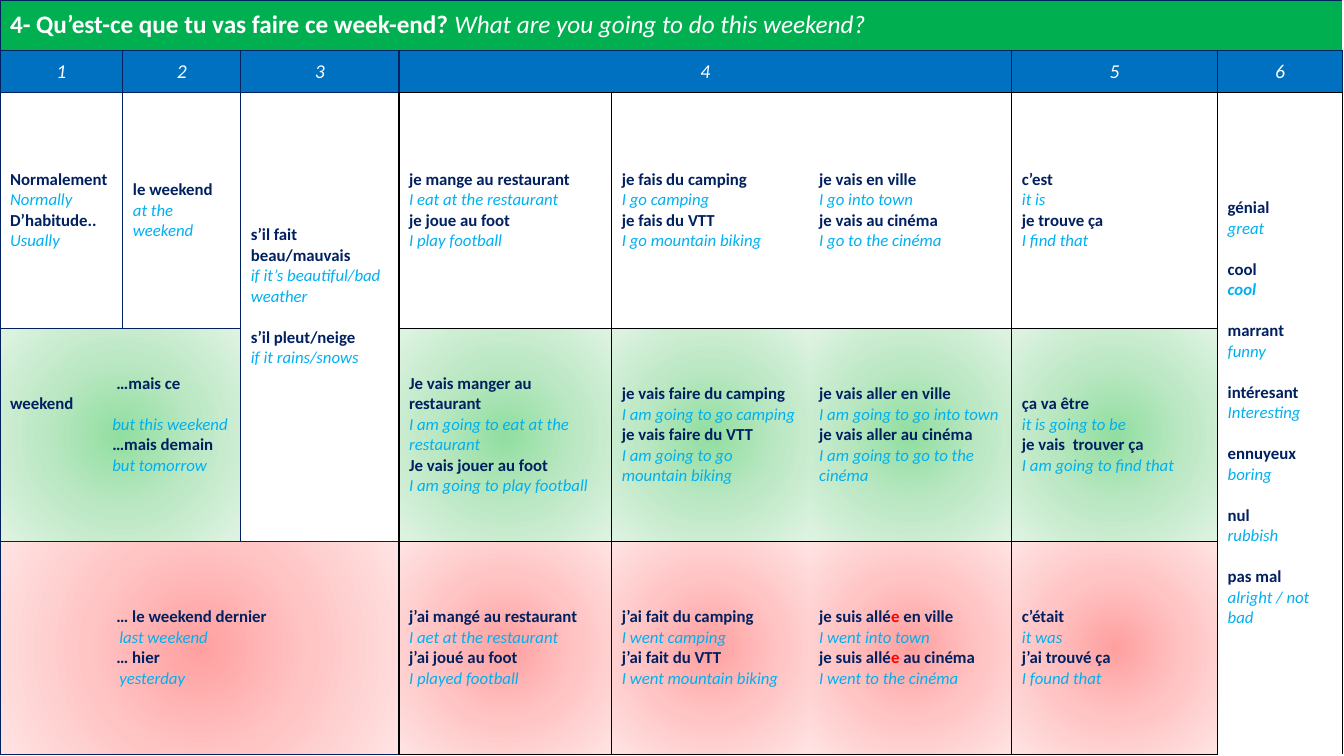
from lxml import etree
from pptx import Presentation
from pptx.dml.color import RGBColor
from pptx.enum.text import MSO_ANCHOR, PP_ALIGN
from pptx.oxml.ns import qn
from pptx.util import Pt

MIDDLE, CENTER = MSO_ANCHOR.MIDDLE, PP_ALIGN.CENTER

# Content: French and English lines alternate, "" leaves a gap, *...* is emphasised
TITLE = ("4- Qu’est-ce que tu vas faire ce week-end? ", "What are you going to do this weekend?")
HEADERS = [(0, 1, "1"), (1, 1, "2"), (2, 1, "3"), (3, 3, "4"), (6, 1, "5"), (7, 1, "6")]

# row, column, rows spanned, columns spanned, lines
PHRASES = [
    (2, 0, 1, 1, ["Normalement", "Normally", "D’habitude..", "Usually"]),
    (2, 1, 1, 1, ["le weekend", "at the weekend"]),
    (2, 2, 2, 1, ["s’il fait beau/mauvais", "if it’s beautiful/bad weather", "",
                  "s’il pleut/neige", "if it rains/snows"]),
    (2, 3, 1, 1, ["je mange au restaurant", "I eat at the restaurant",
                  "je joue au foot", "I play football"]),
    (2, 4, 1, 1, ["je fais du camping", "I go camping",
                  "je fais du VTT", "I go mountain biking"]),
    (2, 5, 1, 1, ["je vais en ville", "I go into town",
                  "je vais au cinéma", "I go to the cinéma"]),
    (2, 6, 1, 1, ["c’est", "it is", "je trouve ça", "I find that"]),
    (2, 7, 3, 1, ["génial", "great", "", "cool", "*cool*", "", "marrant", "funny", "",
                  "intéresant", "Interesting", "", "ennuyeux", "boring", "",
                  "nul", "rubbish", "", "pas mal", "alright / not bad"]),
    (3, 0, 1, 2, ["…mais ce weekend", "but this weekend", "…mais demain", "but tomorrow"]),
    (3, 3, 1, 1, ["Je vais manger au restaurant", "I am going to eat at the restaurant",
                  "Je vais jouer au foot", "I am going to play football"]),
    (3, 4, 1, 1, ["je vais faire du camping", "I am going to go camping",
                  "je vais faire du VTT", "I am going to go mountain biking"]),
    (3, 5, 1, 1, ["je vais aller en ville", "I am going to go into town",
                  "je vais aller au cinéma", "I am going to go to the cinéma"]),
    (3, 6, 1, 1, ["ça va être", "it is going to be",
                  "je vais  trouver ça", "I am going to find that"]),
    (4, 0, 1, 3, ["… le weekend dernier", "last weekend", "… hier", "yesterday"]),
    (4, 3, 1, 1, ["j’ai mangé au restaurant", "I aet at the restaurant",
                  "j’ai joué au foot", "I played football"]),
    (4, 4, 1, 1, ["j’ai fait du camping", "I went camping",
                  "j’ai fait du VTT", "I went mountain biking"]),
    (4, 5, 1, 1, ["je suis allé*e* en ville", "I went into town",
                  "je suis allé*e* au cinéma", "I went to the cinéma"]),
    (4, 6, 1, 1, ["c’était", "it was", "j’ai trouvé ça", "I found that"]),
]

# Look
COLORS = {"title": "00B050", "header": "0070C0", "white": "FFFFFF", "french": "002060",
          "english": "00B0F0", "ending": "FF0000", "navy": "002060", "black": "000000"}
GRADIENTS = {3: ("91DEA0", "BDE8C5", "DFF3E3"), 4: ("FFA0A0", "FFC5C5", "FFE3E3")}
FONT = "Calibri"
COLS = [87.8, 84.2, 113, 152, 141, 144.8, 147, 89.2]
ROWS = [36, 30, 168.7, 152, 152]
LINE = 14.65
INDENTS = {(3, 0): (76, 73, 73, 73), (4, 0): (76, 78, 76, 78)}
LINES_BELOW = {(2, 2): 2, (2, 7): 1, (3, 0): 1}
OPEN_EDGES = (4, 5)  # column edges without a line below the headers
NO_STYLE = "{2D5ABB26-0587-4C30-8999-92F81FD0307C}"


def color(name):
    return RGBColor.from_string(COLORS[name])


def add_solid(parent, hex_color):
    fill = etree.SubElement(parent, qn("a:solidFill"))
    etree.SubElement(fill, qn("a:srgbClr"), val=hex_color)


def fill_radial(cell, stops):
    grad = etree.SubElement(cell._tc.get_or_add_tcPr(), qn("a:gradFill"), rotWithShape="1")
    stop_list = etree.SubElement(grad, qn("a:gsLst"))
    for i, hex_color in enumerate(stops):
        stop = etree.SubElement(stop_list, qn("a:gs"), pos=str(i * 50000))
        etree.SubElement(stop, qn("a:srgbClr"), val=hex_color)
    circle = etree.SubElement(grad, qn("a:path"), path="circle")
    etree.SubElement(circle, qn("a:fillToRect"), l="50000", t="50000", r="50000", b="50000")


def draw_borders(table, row, col, height, width):
    """Line the outside of a block: black around the phrases, navy elsewhere."""
    for r in range(row, row + height):
        for c in range(col, col + width):
            sides = []
            for tag, edge, limit in (("a:lnL", c, col), ("a:lnR", c + 1, col + width)):
                if edge == limit and not (r > 1 and edge in OPEN_EDGES):
                    sides.append((tag, r >= 2 and edge >= 3))
            for tag, edge, limit in (("a:lnT", r, row), ("a:lnB", r + 1, row + height)):
                if edge == limit:
                    sides.append((tag, edge >= 2 and c >= 3))
            tc_pr = table.cell(r, c)._tc.get_or_add_tcPr()
            for i, (tag, is_black) in enumerate(sides):
                line = etree.Element(qn(tag), w=str(Pt(1)))
                add_solid(line, COLORS["black" if is_black else "navy"])
                tc_pr.insert(i, line)


def place_block(table, row, col, height, width):
    cell = table.cell(row, col)
    if height * width > 1:
        cell.merge(table.cell(row + height - 1, col + width - 1))
    cell.vertical_anchor = MIDDLE
    if row < 2:
        cell.fill.solid()
        cell.fill.fore_color.rgb = color("header" if row else "title")
    elif row in GRADIENTS:
        fill_radial(cell, GRADIENTS[row])
    else:
        cell.fill.background()
    draw_borders(table, row, col, height, width)
    return cell


def style(font, size, color_name, bold, italic):
    font.name, font.size = FONT, Pt(size)
    font.bold, font.italic = bold, italic
    font.color.rgb = color(color_name)


def write_phrases(cell, lines, indents):
    tf = cell.text_frame
    count, gap = 0, False
    for text in lines:
        if not text:
            gap = True
            continue
        p = tf.add_paragraph() if count else tf.paragraphs[0]
        if gap:
            p.space_before = Pt(LINE)
        if indents:
            p_pr = p._p.get_or_add_pPr()
            p_pr.set("marL", "0")
            p_pr.set("indent", str(Pt(indents[count])))
        is_french = count % 2 == 0
        for i, part in enumerate(text.split("*")):
            if part:
                r = p.add_run()
                r.text = part
                name = "english" if not is_french else "ending" if i % 2 else "french"
                style(r.font, 12, name, is_french or i % 2 == 1, not is_french)
        count, gap = count + 1, False


prs = Presentation()
prs.slide_width, prs.slide_height = Pt(960), Pt(540)
s = prs.slides.add_slide(prs.slide_layouts[6])

# Table grid
table = s.shapes.add_table(len(ROWS), len(COLS), 0, 0, Pt(sum(COLS)), Pt(sum(ROWS))).table
table.first_row = table.horz_banding = False
table._tbl.tblPr.find(qn("a:tableStyleId")).text = NO_STYLE
for column, width in zip(table.columns, COLS):
    column.width = Pt(width)
for table_row, height in zip(table.rows, ROWS):
    table_row.height = Pt(height)

# Title band
p = place_block(table, 0, 0, 1, len(COLS)).text_frame.paragraphs[0]
for text, is_french in zip(TITLE, (True, False)):
    r = p.add_run()
    r.text = text
    style(r.font, 18, "white", is_french, not is_french)

# Column numbers
for col, width, number in HEADERS:
    p = place_block(table, 1, col, 1, width).text_frame.paragraphs[0]
    p.text, p.alignment = number, CENTER
    style(p.font, 14, "white", False, True)

# Phrases
for row, col, height, width, lines in PHRASES:
    cell = place_block(table, row, col, height, width)
    cell.margin_bottom = Pt(3.6 + LINE * LINES_BELOW.get((row, col), 0))
    write_phrases(cell, lines, INDENTS.get((row, col)))

prs.save("out.pptx")
